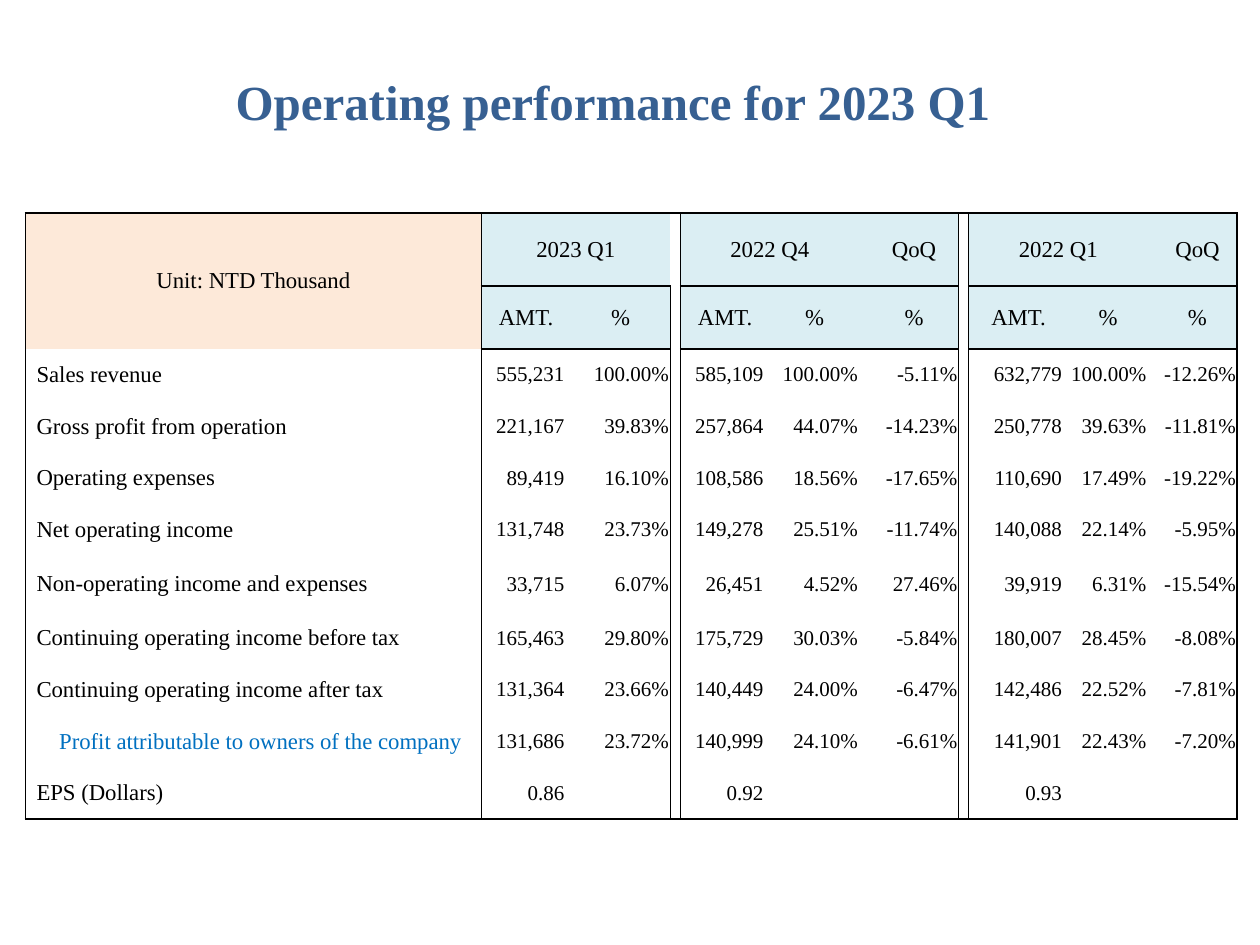
from lxml.etree import SubElement as Sub
from pptx import Presentation
from pptx.dml.color import RGBColor as Rgb
from pptx.enum.text import MSO_ANCHOR as Anchor, PP_ALIGN as Align
from pptx.oxml.ns import qn
from pptx.util import Inches, Pt

COLORS = {"title": "376092", "unit": "FDE9D9", "head": "DBEEF3",
          "text": "000000", "owner": "0070C0", "line": "000000"}
FONT = "Times New Roman"
WIDTHS = [3.62, 0.71, 0.79, 0.08, 0.71, 0.71, 0.08, 0.71, 0.08, 0.79, 0.63, 0.08, 0.63]
HEIGHTS = [0.58, 0.5, 0.41, 0.41, 0.41, 0.41, 0.45, 0.41, 0.41, 0.41, 0.41]
GAPS = (3, 8)
FIELDS = (1, 2, 4, 5, 7, 9, 10, 12)
AMOUNTS = (1, 4, 9)
OWNER = "Profit attributable to owners of the company"
ROWS = [
    ("Sales revenue", "555,231 100.00% 585,109 100.00% -5.11% 632,779 100.00% -12.26%"),
    ("Gross profit from operation", "221,167 39.83% 257,864 44.07% -14.23% 250,778 39.63% -11.81%"),
    ("Operating expenses", "89,419 16.10% 108,586 18.56% -17.65% 110,690 17.49% -19.22%"),
    ("Net operating income", "131,748 23.73% 149,278 25.51% -11.74% 140,088 22.14% -5.95%"),
    ("Non-operating income and expenses", "33,715 6.07% 26,451 4.52% 27.46% 39,919 6.31% -15.54%"),
    ("Continuing operating income before tax", "165,463 29.80% 175,729 30.03% -5.84% 180,007 28.45% -8.08%"),
    ("Continuing operating income after tax", "131,364 23.66% 140,449 24.00% -6.47% 142,486 22.52% -7.81%"),
    (OWNER, "131,686 23.72% 140,999 24.10% -6.61% 141,901 22.43% -7.20%"),
]
EPS = {1: "0.86", 4: "0.92", 9: "0.93"}
THIN, THICK = 0.75, 1
COL_LINES = {0: THIN, 1: THICK, 3: THIN, 4: THIN, 8: THIN, 9: THIN, 13: THICK}
ROW_LINES = {0: THICK, 1: THIN, 2: THIN, 11: THICK}


def write(frame, text, size, color, align, bold=False):
    para = frame.paragraphs[0]
    para.alignment = align
    run = para.add_run()
    run.text = text
    style = {"name": FONT, "size": Pt(size), "bold": bold}
    for key, value in style.items():
        setattr(run.font, key, value)
    run.font.color.rgb = Rgb.from_string(COLORS[color])


def border(cell, side, width):
    line = Sub(cell._tc.get_or_add_tcPr(), qn("a:ln" + side))
    if width:
        line.set("w", str(Pt(width)))
        fill = Sub(line, qn("a:solidFill"))
        Sub(fill, qn("a:srgbClr")).set("val", COLORS["line"])
    else:
        Sub(line, qn("a:noFill"))


deck = Presentation()
deck.slide_width, deck.slide_height = Inches(10), Inches(7.5)
slide = deck.slides.add_slide(deck.slide_layouts[5])

title = slide.shapes.title
place = {"left": 1.77, "top": 0.52, "width": 6.46, "height": 1.51}
for key, value in place.items():
    setattr(title, key, Inches(value))
title.text_frame.vertical_anchor = Anchor.TOP
title.text_frame.word_wrap = True
write(title.text_frame, "Operating performance for 2023 Q1", 28, "title", Align.LEFT, True)

frame = slide.shapes.add_table(len(HEIGHTS), len(WIDTHS), Inches(0.2), Inches(1.69),
                               Inches(sum(WIDTHS)), Inches(sum(HEIGHTS)))
table = frame.table
table.first_row = table.horz_banding = False
for column, width in zip(table.columns, WIDTHS):
    column.width = Inches(width)
for line, height in zip(table.rows, HEIGHTS):
    line.height = Inches(height)

texts = {(0, 0): "Unit: NTD Thousand", (0, 1): "2023 Q1", (0, 4): "2022 Q4",
         (0, 7): "QoQ", (0, 9): "2022 Q1", (0, 12): "QoQ"}
for col in FIELDS:
    texts[1, col] = "AMT." if col in AMOUNTS else "%"
for row, (label, values) in enumerate(ROWS, 2):
    texts[row, 0] = label
    for col, value in zip(FIELDS, values.split()):
        texts[row, col] = value
texts[10, 0] = "EPS (Dollars)"
for col, value in EPS.items():
    texts[10, col] = value

table.cell(0, 0).merge(table.cell(1, 0))
for col in AMOUNTS:
    table.cell(0, col).merge(table.cell(0, col + 1))

for row in range(len(HEIGHTS)):
    for col in range(len(WIDTHS)):
        cell = table.cell(row, col)
        border(cell, "L", COL_LINES.get(col))
        border(cell, "R", COL_LINES.get(col + 1))
        for side, edge in (("T", row), ("B", row + 1)):
            bare = (col in GAPS and edge in (1, 2)) or (col == 0 and edge == 1)
            border(cell, side, None if bare else ROW_LINES.get(edge))
        if row < 2 and col not in GAPS:
            cell.fill.solid()
            cell.fill.fore_color.rgb = Rgb.from_string(COLORS["head" if col else "unit"])
        else:
            cell.fill.background()

        text = texts.get((row, col))
        pad = {"margin_left": 0, "margin_right": 0, "margin_top": 0, "margin_bottom": 0}
        size, color, align = 13, "text", Align.CENTER
        if row > 1 and col == 0:
            align = Align.LEFT
            pad["margin_left"] = 0.27 if text == OWNER else 0.09
            color = "owner" if text == OWNER else "text"
        elif row > 1:
            size, align = 12, Align.RIGHT
            pad["margin_right"] = 0.05 if col in AMOUNTS else 0.01
        for key, value in pad.items():
            setattr(cell, key, Inches(value))
        cell.vertical_anchor = Anchor.MIDDLE
        if text:
            write(cell.text_frame, text, size, color, align)

deck.save("out.pptx")
